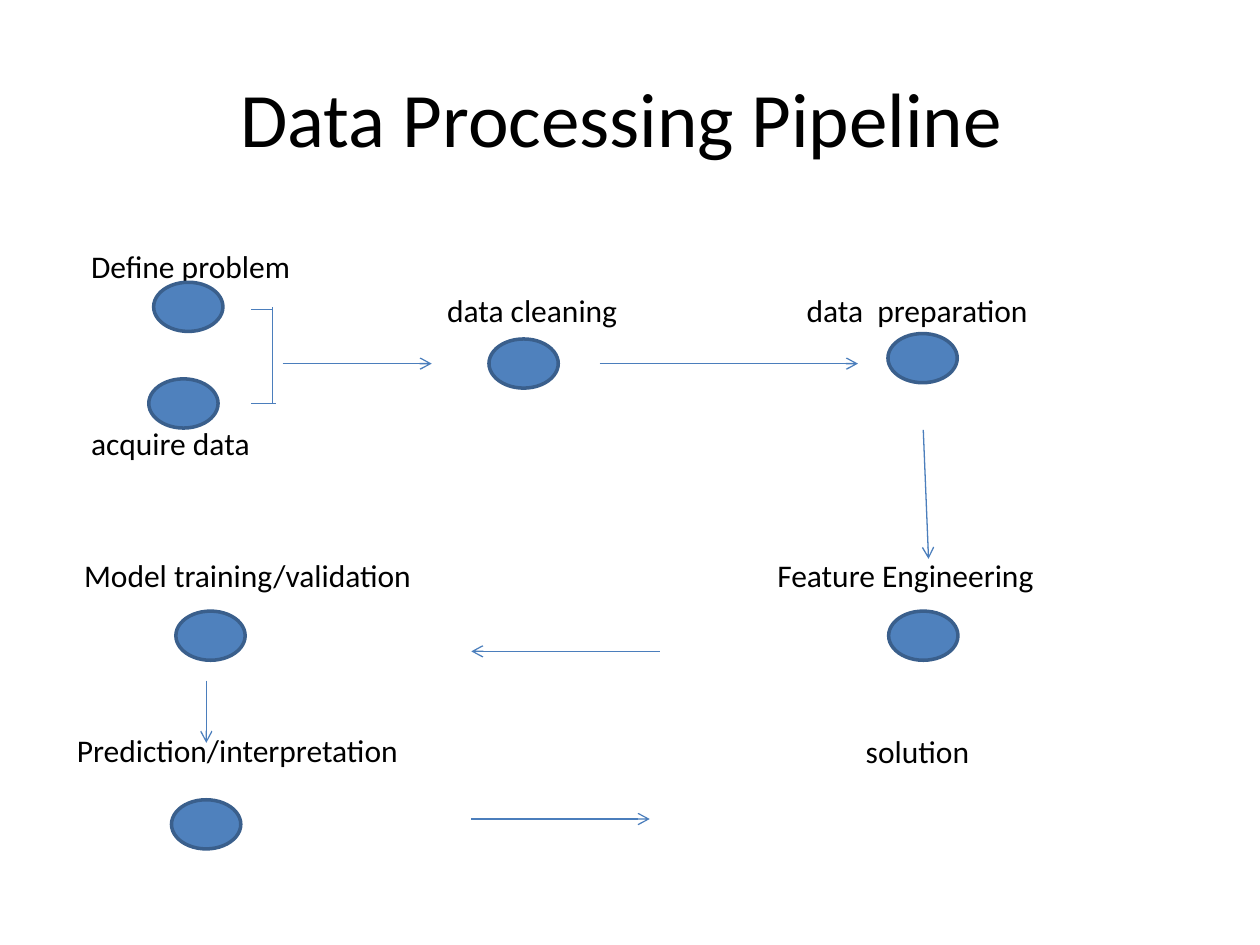
from pptx import Presentation
from pptx.dml.color import RGBColor
from pptx.enum.shapes import MSO_CONNECTOR, MSO_SHAPE
from pptx.enum.text import MSO_ANCHOR, MSO_AUTO_SIZE, PP_ALIGN
from pptx.oxml.ns import qn
from pptx.util import Pt
from lxml import etree

STRAIGHT = MSO_CONNECTOR.STRAIGHT
ELLIPSE = MSO_SHAPE.OVAL
MIDDLE, TOP = MSO_ANCHOR.MIDDLE, MSO_ANCHOR.TOP
CENTER, LEFT = PP_ALIGN.CENTER, PP_ALIGN.LEFT
FIXED_SIZE = MSO_AUTO_SIZE.NONE

BLACK, NODE_FILL, NODE_EDGE, FLOW = "000000", "4F81BD", "3A5F8C", "4B7EBC"
NODE_WIDTH, NODE_HEIGHT = 39.6, 28.1
LABEL_HEIGHT = 22

# Space before, indent, wording
LEFT_COLUMN = [
    (0, 8.1, "Define problem"),
    (79.2, 8.1, "acquire data"),
    (53.9, 4.1, "Model training/validation"),
    (78.6, 0, "Prediction/interpretation"),
]
# Left, top, width, wording
OTHER_LABELS = [
    (255.5, 166.4, 110, "data cleaning"),
    (460.9, 166.4, 140, "data  preparation"),
    (444.2, 317.9, 160, "Feature Engineering"),
    (494.7, 418.4, 70, "solution"),
]
NODES = [
    (87.8, 161.3),   # define problem
    (85, 216.5),     # acquire data
    (279.4, 193.7),  # data cleaning
    (507.4, 190.6),  # data preparation
    (507.8, 349.2),  # feature engineering
    (100.5, 349.2),  # model training
    (98, 457),       # prediction
]
ARROWS = [
    (161.5, 207.8, 246.7, 207.8),
    (342.7, 207.8, 490.3, 207.8),
    (527.6, 245.7, 530.6, 319.4),
    (376.9, 372.2, 269.3, 372.2),
    (117.9, 389, 117.9, 424.5),
    (269.3, 468, 371.3, 468),
]
BRACKET = [
    (143.5, 176.8, 155.9, 176.8),
    (143.5, 230.5, 157.5, 230.5),
    (155.9, 175.5, 155.9, 230.5),
]


def rgb(value):
    return RGBColor.from_string(value)


def apply_format(target, values):
    for attribute, value in values.items():
        setattr(target, attribute, value)


def write(paragraph, wording, size, alignment=LEFT):
    paragraph.alignment = alignment
    run = paragraph.add_run()
    run.text = wording
    apply_format(run.font, {"name": "Calibri", "size": Pt(size)})
    run.font.color.rgb = rgb(BLACK)


def place(placeholder, left, top, width, height):
    apply_format(placeholder, {"left": Pt(left), "top": Pt(top),
                               "width": Pt(width), "height": Pt(height)})


def add_title(slide, wording):
    title = slide.shapes.title
    place(title, 36, 21.6, 648, 90)
    frame = title.text_frame
    apply_format(frame, {"vertical_anchor": MIDDLE, "auto_size": FIXED_SIZE,
                         "margin_right": Pt(17)})
    write(frame.paragraphs[0], wording, 44, CENTER)


def set_indent(paragraph, indent):
    """Replace the bullet and hanging indent by a plain left indent."""
    properties = paragraph._p.get_or_add_pPr()
    properties.set("marL", str(int(Pt(indent))))
    properties.set("indent", "0")
    etree.SubElement(properties, qn("a:buNone"))


def add_left_column(slide):
    body = slide.placeholders[1]
    place(body, 36.7, 82.8, 648, 440.6)
    frame = body.text_frame
    apply_format(frame, {"auto_size": FIXED_SIZE, "vertical_anchor": TOP,
                         "word_wrap": True, "margin_top": Pt(58.5)})
    for index, (gap, indent, wording) in enumerate(LEFT_COLUMN):
        step = frame.add_paragraph() if index else frame.paragraphs[0]
        step.space_before = Pt(gap)
        set_indent(step, indent)
        write(step, wording, 18)


def add_label(slide, left, top, width, wording):
    label = slide.shapes.add_textbox(Pt(left), Pt(top), Pt(width), Pt(LABEL_HEIGHT))
    frame = label.text_frame
    apply_format(frame, {"word_wrap": True, "margin_left": 0, "margin_top": 0,
                         "margin_right": 0, "margin_bottom": 0})
    write(frame.paragraphs[0], wording, 18)


def add_node(slide, left, top):
    node = slide.shapes.add_shape(ELLIPSE, Pt(left), Pt(top),
                                  Pt(NODE_WIDTH), Pt(NODE_HEIGHT))
    node.shadow.inherit = False
    node.fill.solid()
    node.fill.fore_color.rgb = rgb(NODE_FILL)
    node.line.color.rgb = rgb(NODE_EDGE)
    node.line.width = Pt(2)


def add_flow_line(slide, ends, arrowhead=False):
    flow = slide.shapes.add_connector(STRAIGHT, *map(Pt, ends))
    flow.line.color.rgb = rgb(FLOW)
    flow.line.width = Pt(0.75)
    if arrowhead:
        etree.SubElement(flow.line._get_or_add_ln(), qn("a:tailEnd"), type="arrow")
    etree.SubElement(flow._element.spPr, qn("a:effectLst"))


def main():
    deck = Presentation()
    apply_format(deck, {"slide_width": Pt(720), "slide_height": Pt(540)})
    slide = deck.slides.add_slide(deck.slide_layouts[1])
    add_title(slide, "Data Processing Pipeline")
    add_left_column(slide)
    for label in OTHER_LABELS:
        add_label(slide, *label)
    for left, top in NODES:
        add_node(slide, left, top)
    for ends in ARROWS:
        add_flow_line(slide, ends, arrowhead=True)
    for ends in BRACKET:
        add_flow_line(slide, ends)
    deck.save("out.pptx")


if __name__ == "__main__":
    main()
